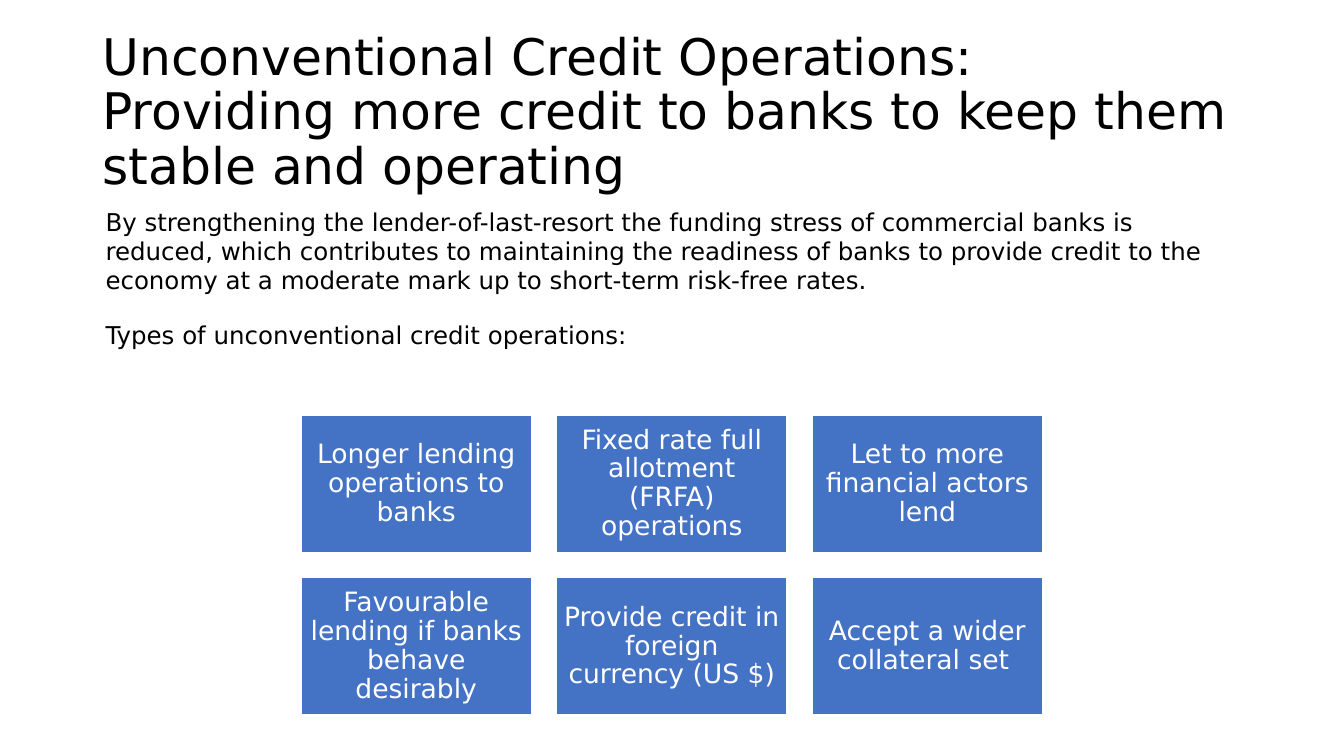
import dataclasses

import pptx
import pptx.dml.color
import pptx.enum.shapes
import pptx.enum.text
import pptx.util
from pptx.util import Cm

ALIGN = pptx.enum.text.PP_ALIGN
ANCHOR = pptx.enum.text.MSO_ANCHOR


@dataclasses.dataclass(frozen=True)
class Theme:
    font: str = "DejaVu Sans"
    text: str = "000000"
    box: str = "4472C4"
    light: str = "FFFFFF"
    title_size: float = 36
    body_size: float = 17.5
    box_size: float = 19


THEME = Theme()

TITLE = (
    "Unconventional Credit Operations: \v"
    "Providing more credit to banks to keep them stable and operating"
)
INTRODUCTION = (
    "By strengthening the lender-of-last-resort the funding stress of commercial "
    "banks is reduced, which contributes to maintaining the readiness of banks to "
    "provide credit to the economy at a moderate mark up to short-term risk-free rates."
)
TYPES_HEADING = "Types of unconventional credit operations:"
OPERATIONS = [
    "Longer lending operations to banks",
    "Fixed rate full allotment (FRFA) operations",
    "Let to more financial actors lend",
    "Favourable lending if banks behave desirably",
    "Provide credit in foreign currency (US $)",
    "Accept a wider collateral set ",
]


def rgb(value):
    return pptx.dml.color.RGBColor.from_string(value)


def apply_format(target, values):
    for name, value in values.items():
        setattr(target, name, value)


def write_paragraph(paragraph, text, size, color, **layout):
    paragraph.text = text
    apply_format(paragraph, layout)
    apply_format(paragraph.font, {"name": THEME.font, "size": pptx.util.Pt(size)})
    paragraph.font.color.rgb = rgb(color)


def format_frame(text_frame, anchor, side, edge):
    apply_format(text_frame, {
        "word_wrap": True,
        "vertical_anchor": anchor,
        "margin_left": side,
        "margin_right": side,
        "margin_top": edge,
        "margin_bottom": edge,
    })


def add_text(slide, left, top, width, height, anchor):
    text_frame = slide.shapes.add_textbox(left, top, width, height).text_frame
    format_frame(text_frame, anchor, Cm(0.25), Cm(0.13))
    return text_frame


def add_title(slide):
    text_frame = add_text(slide, Cm(2.33), Cm(1.02), Cm(29.21), Cm(3.68), ANCHOR.MIDDLE)
    write_paragraph(text_frame.paragraphs[0], TITLE, THEME.title_size, THEME.text,
                    line_spacing=0.9)


def add_body(slide):
    text_frame = add_text(slide, Cm(2.33), Cm(5.08), Cm(29.21), Cm(5.16), ANCHOR.TOP)
    text_frame.margin_left = Cm(0.33)
    write_paragraph(text_frame.paragraphs[0], INTRODUCTION, THEME.body_size, THEME.text)
    write_paragraph(text_frame.add_paragraph(), TYPES_HEADING, THEME.body_size, THEME.text,
                    line_spacing=0.9, space_before=pptx.util.Pt(20.5))


def add_operation_box(slide, text, left, top, width, height):
    rectangle = pptx.enum.shapes.MSO_SHAPE.RECTANGLE
    shape = slide.shapes.add_shape(rectangle, left, top, width, height)
    shape.shadow.inherit = False
    shape.fill.solid()
    shape.fill.fore_color.rgb = rgb(THEME.box)
    shape.line.color.rgb = rgb(THEME.light)
    shape.line.width = pptx.util.Pt(2)
    format_frame(shape.text_frame, ANCHOR.MIDDLE, Cm(0.2), Cm(0.2))
    write_paragraph(shape.text_frame.paragraphs[0], text, THEME.box_size, THEME.light,
                    alignment=ALIGN.CENTER, line_spacing=0.9)


def add_operation_grid(slide, columns=3):
    left, top, width, height, gap = Cm(7.57), Cm(10.44), Cm(5.84), Cm(3.5), Cm(0.6)
    for index, text in enumerate(OPERATIONS):
        row, column = divmod(index, columns)
        add_operation_box(slide, text, left + column * (width + gap),
                          top + row * (height + gap), width, height)


def main():
    presentation = pptx.Presentation()
    apply_format(presentation, {"slide_width": Cm(33.87), "slide_height": Cm(19.05)})
    slide = presentation.slides.add_slide(presentation.slide_layouts[6])

    # Heading and introduction
    add_title(slide)
    add_body(slide)

    # Types of operations
    add_operation_grid(slide)

    presentation.save("out.pptx")


if __name__ == "__main__":
    main()
